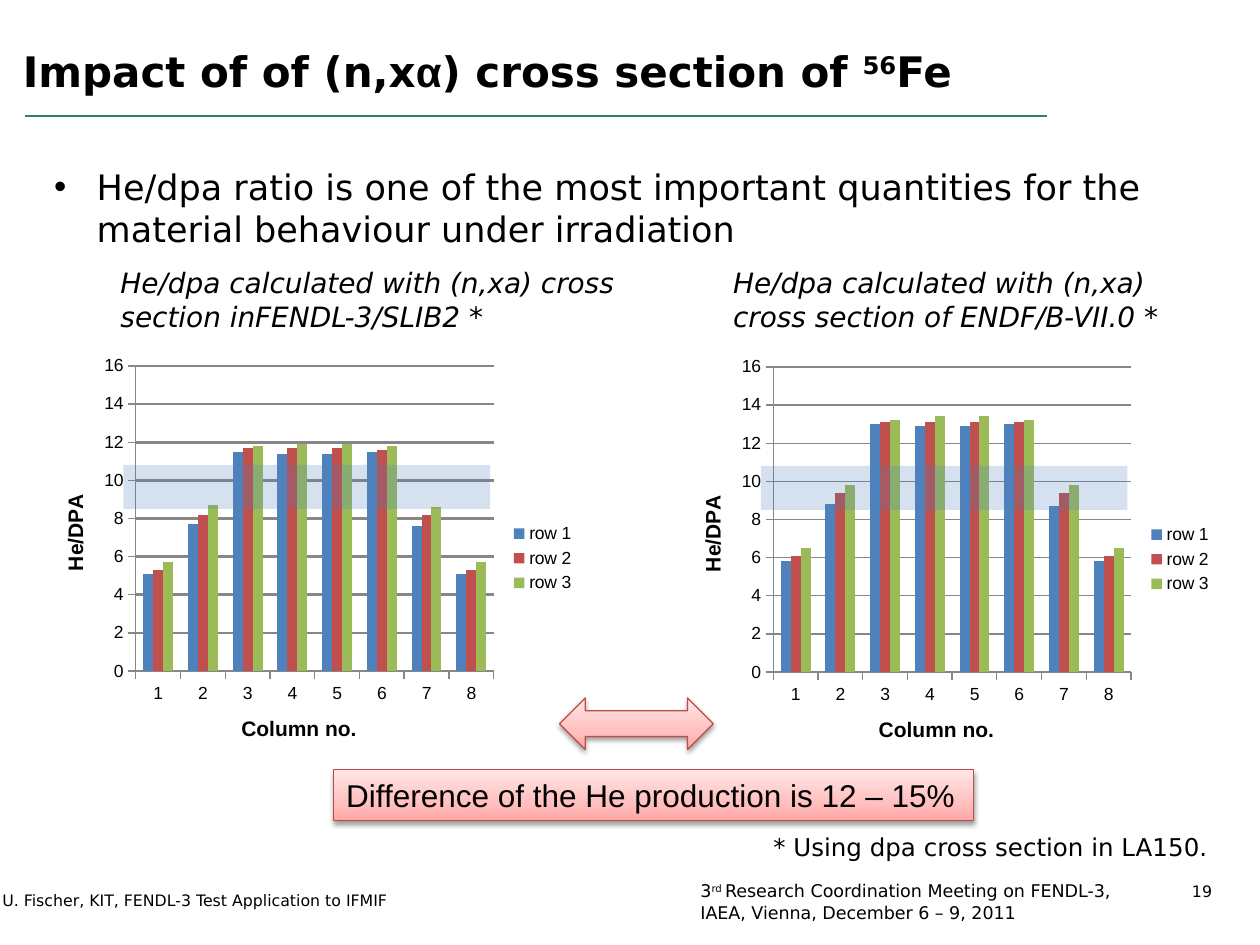
from lxml.etree import SubElement
from pptx import Presentation
from pptx.chart.data import CategoryChartData
from pptx.dml.color import RGBColor
from pptx.enum.chart import XL_CHART_TYPE, XL_LEGEND_POSITION, XL_TICK_MARK
from pptx.enum.shapes import MSO_CONNECTOR, MSO_SHAPE
from pptx.enum.text import MSO_ANCHOR, MSO_AUTO_SIZE, PP_ALIGN
from pptx.oxml import parse_xml
from pptx.oxml.ns import nsdecls, qn
from pptx.util import Cm, Pt

# Content: positions are (left, top, width, height) in cm
SANS, ARIAL = "DejaVu Sans", "Arial"
TITLE = [("Impact of of (n,x", {}), ("α", {"name": ARIAL}), (") cross section of ", {}),
         ("56", {"sup": True}), ("Fe", {})]
BODY = [("He/dpa ratio is one of the most important quantities for the "
         "material behaviour under irradiation", {})]
MEETING = [("3", {}), ("rd ", {"sup": True}),
           ("Research Coordination Meeting on FENDL-3, IAEA, Vienna, December 6 – 9, 2011", {})]
RESULT = [("Difference of the He production is 12 – 15%", {})]
NOTE = [("* Using dpa cross section in LA150.", {})]
AUTHOR = [("U. Fischer, KIT, FENDL-3 Test Application to IFMIF", {})]
CHARTS = [
    {"pos": (0.74, 7.04), "max": 16, "grid": 1.5,
     "caption": "He/dpa calculated with (n,xa) cross section inFENDL-3/SLIB2 *",
     "caption_box": (2.18, 5.23, 10.97, 1.63),
     "rows": [(5.1, 7.7, 11.5, 11.4, 11.4, 11.5, 7.6, 5.1),
              (5.3, 8.2, 11.7, 11.7, 11.7, 11.6, 8.2, 5.3),
              (5.7, 8.7, 11.8, 11.9, 11.9, 11.8, 8.6, 5.7)]},
    {"pos": (13.59, 7.06), "max": None, "grid": 0.75,
     "caption": "He/dpa calculated with (n,xa) cross section of ENDF/B-VII.0 *",
     "caption_box": (14.53, 5.23, 9.98, 1.63),
     "rows": [(5.8, 8.8, 13, 12.9, 12.9, 13, 8.7, 5.8),
              (6.1, 9.4, 13.1, 13.1, 13.1, 13.1, 9.4, 6.1),
              (6.5, 9.8, 13.2, 13.4, 13.4, 13.2, 9.8, 6.5)]},
]
CHART_SIZE = (11.1, 8.43)
BAND_OFFSET, BAND_SIZE = (1.75, 2.33), (7.39, 0.89)
PLOT = {"x": 0.18, "y": 0.04, "w": 0.65, "h": 0.73}
ROW_COLORS = ["4F81BD", "C0504D", "9BBB59"]
PINKS = [(0, "FFA6A5"), (35, "FFC0BF"), (100, "FFE7E7")]


def rgb(color):
    return RGBColor.from_string(color)


def cm(*values):
    return [Cm(v) for v in values]


def style_font(font, **values):
    font.color.rgb = rgb("000000")
    for key, value in values.items():
        setattr(font, key, value)


def write(sp, runs, margin=None, wrap=True, **values):
    tf = sp.text_frame
    tf.word_wrap = wrap
    tf.auto_size = MSO_AUTO_SIZE.NONE
    if margin is not None:
        for side in ("left", "top", "right", "bottom"):
            setattr(tf, f"margin_{side}", Cm(margin))
    p = tf.paragraphs[0]
    p.alignment = PP_ALIGN.LEFT
    p.space_before = Pt(0)
    for text, extra in runs:
        r = p.add_run()
        r.text = text
        options = {"name": SANS, **values, **extra}
        raised = options.pop("sup", False)
        style_font(r.font, **options)
        if raised:
            r.font._element.set("baseline", "30000")
    return tf


def place(sp, box):
    sp.left, sp.top, sp.width, sp.height = cm(*box)
    return sp


def add_text(s, box, runs, **values):
    return write(s.shapes.add_textbox(*cm(*box)), runs, **values)


def add_pink(s, kind, box):
    sp = s.shapes.add_shape(kind, *cm(*box))
    sp.fill.gradient()
    sp.fill.gradient_angle = 90
    stops = sp._element.spPr.find(".//" + qn("a:gsLst"))
    for stop in list(stops):
        stops.remove(stop)
    for pos, color in PINKS:
        stop = SubElement(stops, qn("a:gs"), pos=str(pos * 1000))
        SubElement(stop, qn("a:srgbClr"), val=color)
    sp.line.color.rgb = rgb("BF4C48")
    sp.line.width = Pt(0.75)
    sp._element.spPr.append(parse_xml(
        f'<a:effectLst {nsdecls("a")}><a:outerShdw blurRad="39370" dist="20320" dir="5400000" '
        'rotWithShape="0"><a:srgbClr val="000000"><a:alpha val="38000"/></a:srgbClr>'
        '</a:outerShdw></a:effectLst>'))
    return sp


def add_band(s, box):
    sp = s.shapes.add_shape(MSO_SHAPE.RECTANGLE, *cm(*box))
    sp.shadow.inherit = False
    sp.fill.solid()
    sp.fill.fore_color.rgb = rgb("4F81BD")
    SubElement(sp._element.spPr.find(".//" + qn("a:srgbClr")), qn("a:alpha"), val="23000")
    sp.line.fill.background()


def add_ratio_chart(s, spec_data):
    data = CategoryChartData()
    data.categories = [str(n) for n in range(1, 9)]
    for n, row in enumerate(spec_data["rows"], 1):
        data.add_series(f"row {n}", row)
    chart = s.shapes.add_chart(XL_CHART_TYPE.COLUMN_CLUSTERED,
                               *cm(*spec_data["pos"], *CHART_SIZE), data).chart
    chart.has_title = False
    style_font(chart.font, name=ARIAL, size=Pt(10))
    chart.has_legend = True
    chart.legend.position = XL_LEGEND_POSITION.RIGHT
    chart.legend.include_in_layout = False
    plot = chart.plots[0]
    plot.gap_width, plot.overlap, plot.vary_by_categories = 150, 0, False
    for series, color in zip(plot.series, ROW_COLORS):
        series.format.fill.solid()
        series.format.fill.fore_color.rgb = rgb(color)

    # Axes
    for axis, title in ((chart.category_axis, "Column no."), (chart.value_axis, "He/DPA ")):
        axis.major_tick_mark = XL_TICK_MARK.OUTSIDE
        axis.format.line.color.rgb = rgb("868686")
        tf = axis.axis_title.text_frame
        tf.text = title
        style_font(tf.paragraphs[0].runs[0].font, name=ARIAL, size=Pt(12), bold=True)
    tf._txBody.bodyPr.set("rot", "-5400000")
    tf._txBody.bodyPr.set("vert", "horz")
    axis.maximum_scale = spec_data["max"]
    axis.has_major_gridlines = True
    axis.major_gridlines.format.line.color.rgb = rgb("868686")
    axis.major_gridlines.format.line.width = Pt(spec_data["grid"])

    # Fixed plot area
    area = chart._chartSpace.chart.plotArea
    for old in area.findall(qn("c:layout")):
        area.remove(old)
    sizes = "".join(f'<c:{key} val="{value}"/>' for key, value in PLOT.items())
    area.insert(0, parse_xml(
        f'<c:layout {nsdecls("c")}><c:manualLayout><c:layoutTarget val="inner"/>'
        f'<c:xMode val="edge"/><c:yMode val="edge"/>{sizes}</c:manualLayout></c:layout>'))


prs = Presentation()
prs.slide_width, prs.slide_height = cm(25.4, 19.05)
s = prs.slides.add_slide(prs.slide_layouts[1])

# Title and rule
title = place(s.shapes.title, (0.46, 0.38, 19.2, 1.55))
write(title, TITLE, margin=0, size=Pt(24), bold=True).vertical_anchor = MSO_ANCHOR.BOTTOM
rule = s.shapes.add_connector(MSO_CONNECTOR.STRAIGHT, *cm(0.51, 2.34, 21.11, 2.34))
rule.line.color.rgb = rgb("2C8462")
rule.line.width = Pt(0.75)
SubElement(rule._element.spPr, qn("a:effectLst"))

# Bullet
body = place(s.placeholders[1], (1.09, 3.33, 23.22, 13.59))
p = write(body, BODY, margin=0, size=Pt(20)).paragraphs[0]
pPr = p._p.get_or_add_pPr()
pPr.set("marL", str(Cm(0.86)))
pPr.set("indent", str(-Cm(0.86)))
SubElement(pPr, qn("a:buChar"), char="•")

# Charts with captions and target bands
for item in CHARTS:
    add_ratio_chart(s, item)
    add_text(s, item["caption_box"], [(item["caption"], {})], size=Pt(16), italic=True)
    corner = [a + b for a, b in zip(item["pos"], BAND_OFFSET)]
    add_band(s, (*corner, *BAND_SIZE))

# Result
result = add_pink(s, MSO_SHAPE.RECTANGLE, (6.73, 15.52, 12.9, 1.02))
write(result, RESULT, wrap=False, name=ARIAL, size=Pt(18))
add_pink(s, MSO_SHAPE.LEFT_RIGHT_ARROW, (11.28, 14.07, 3.1, 1.04))
add_text(s, (15.34, 16.64, 9.45, 0.86), NOTE, wrap=False, size=Pt(14))

# Footer
add_text(s, (-0.2, 17.83, 12.7, 0.64), AUTHOR, size=Pt(9))
add_text(s, (14.12, 17.75, 8.69, 0.99), MEETING, margin=0, size=Pt(10))
add_text(s, (24.03, 17.78, 0.91, 0.61), [("19", {})], margin=0, size=Pt(9))

prs.save("out.pptx")
